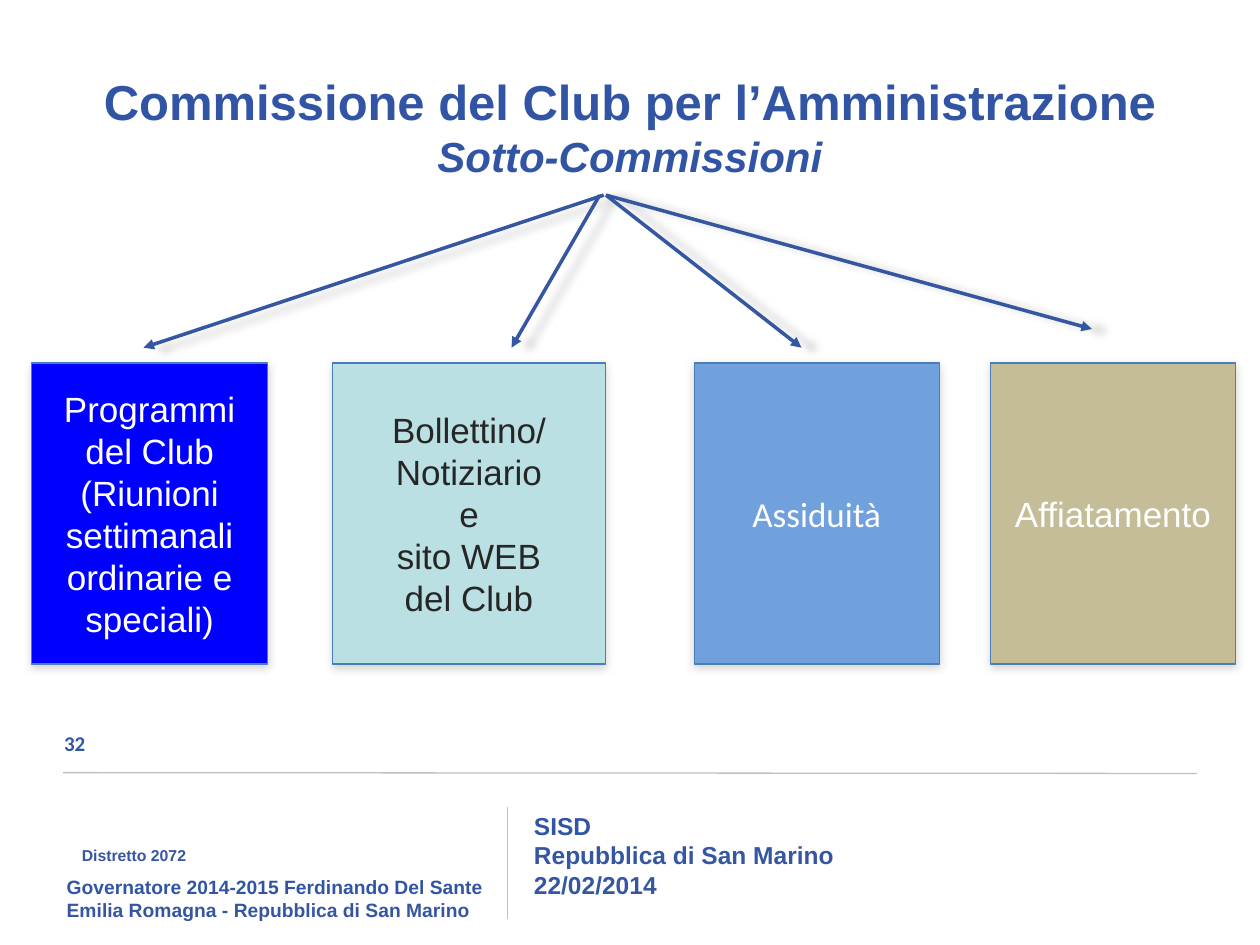
from dataclasses import dataclass

from lxml.etree import SubElement
from pptx import Presentation
from pptx.dml.color import RGBColor
from pptx.enum.shapes import MSO_CONNECTOR as Connector, MSO_SHAPE as Shape
from pptx.enum.text import MSO_ANCHOR as Anchor, MSO_AUTO_SIZE as AutoSize, PP_ALIGN as Align
from pptx.oxml.ns import qn
from pptx.util import Pt

NAVY = "3155A4"
SLATE = "3557A2"
GREY = "C0C0C0"
WHITE = "FFFFFF"
BOX_TOP, BOX_HEIGHT = 207.5, 172


@dataclass
class Committee:
    left: float
    width: float
    fill: str
    lines: list[str]
    color: str = WHITE
    font: str = "Arial"


@dataclass
class Arrow:
    start: tuple[float, float]
    end: tuple[float, float]


@dataclass
class Shadow:
    distance: float
    angle: int
    opacity: int
    blur: float = 5


COMMITTEES = [
    Committee(18, 135, "0000FF",
              ["Programmi", "del Club", "(Riunioni", "settimanali ordinarie e speciali)"]),
    Committee(190, 156, "BBE0E3",
              ["Bollettino/Notiziario", "e", "sito WEB", "del Club"], "262626"),
    Committee(396.7, 140, "71A1DC", ["Assiduità"], font="Calibri"),
    Committee(566, 140, "C4BD97", ["Affiatamento"]),
]
ARROWS = [
    Arrow((345, 111.5), (82, 198.7)),
    Arrow((342.7, 111.5), (292.3, 198.7)),
    Arrow((346.3, 111.5), (458, 198.7)),
    Arrow((346.3, 111.5), (624, 188)),
]
BOX_SHADOW = Shadow(1.8, 90, 35)
ARROW_SHADOW = Shadow(8.7, 11, 38)


def rgb(value: str) -> RGBColor:
    return RGBColor.from_string(value)


def write(frame, text: str, *, size: float, color: str = NAVY, font: str = "Arial",
          bold: bool = False, italic: bool = False, align=Align.LEFT) -> None:
    paragraph = frame.paragraphs[0]
    if paragraph.runs:
        paragraph = frame.add_paragraph()
    paragraph.alignment = align
    paragraph.space_before = Pt(0)
    run = paragraph.add_run()
    run.text = text
    run.font.name, run.font.size = font, Pt(size)
    run.font.bold, run.font.italic = bold, italic
    run.font.color.rgb = rgb(color)


def add_text_frame(slide, left: float, top: float, width: float, height: float,
                   anchor=Anchor.TOP):
    box = slide.shapes.add_textbox(Pt(left), Pt(top), Pt(width), Pt(height))
    frame = box.text_frame
    frame.word_wrap = True
    frame.vertical_anchor = anchor
    return frame


def set_effects(shape, shadow: Shadow | None = None) -> None:
    effects = SubElement(shape._element.spPr, qn("a:effectLst"))
    if shadow:
        outer = SubElement(effects, qn("a:outerShdw"), blurRad=str(Pt(shadow.blur)),
                           dist=str(Pt(shadow.distance)), dir=str(shadow.angle * 60000),
                           algn="ctr", rotWithShape="0")
        color = SubElement(outer, qn("a:srgbClr"), val="808080")
        SubElement(color, qn("a:alpha"), val=str(shadow.opacity * 1000))


def add_line(slide, start: tuple[float, float], end: tuple[float, float], color: str,
             width: float, arrowhead: bool = False, shadow: Shadow | None = None) -> None:
    points = [Pt(value) for value in (*start, *end)]
    line = slide.shapes.add_connector(Connector.STRAIGHT, *points)
    line.line.color.rgb = rgb(color)
    line.line.width = Pt(width)
    if arrowhead:
        SubElement(line.line._get_or_add_ln(), qn("a:tailEnd"), type="triangle")
    set_effects(line, shadow)


def add_committee(slide, committee: Committee) -> None:
    box = slide.shapes.add_shape(Shape.RECTANGLE, Pt(committee.left), Pt(BOX_TOP),
                                 Pt(committee.width), Pt(BOX_HEIGHT))
    box.fill.solid()
    box.fill.fore_color.rgb = rgb(committee.fill)
    box.line.color.rgb = rgb("4A7EBB")
    box.line.width = Pt(0.75)
    set_effects(box, BOX_SHADOW)
    frame = box.text_frame
    frame.word_wrap = True
    frame.vertical_anchor = Anchor.MIDDLE
    for line in committee.lines:
        write(frame, line, size=20, color=committee.color, font=committee.font,
              align=Align.CENTER)


def add_title(slide) -> None:
    title = slide.shapes.title
    title.left, title.top, title.width, title.height = Pt(0), Pt(38), Pt(720), Pt(68)
    frame = title.text_frame
    frame.auto_size = AutoSize.NONE
    frame.vertical_anchor = Anchor.MIDDLE
    write(frame, "Commissione del Club per l’Amministrazione", size=28, bold=True,
          align=Align.CENTER)
    write(frame, "Sotto-Commissioni", size=24, bold=True, italic=True, align=Align.CENTER)


def add_footer(slide) -> None:
    number = add_text_frame(slide, 29.5, 410.4, 168, 29, Anchor.MIDDLE)
    write(number, "32", size=12, font="Calibri", bold=True)

    event = add_text_frame(slide, 298, 456.5, 301, 64, Anchor.MIDDLE)
    write(event, "SISD", size=14, bold=True)
    for text in ("Repubblica di San Marino", "22/02/2014"):
        write(event, text, size=14, color=SLATE, bold=True)

    add_line(slide, (290.2, 525), (290.2, 461), GREY, 0.75)
    add_line(slide, (36, 441.5), (684, 442), GREY, 0.75)

    governor = add_text_frame(slide, 31, 496.8, 284, 43)
    write(governor, "Governatore 2014-2015 Ferdinando Del Sante", size=11, bold=True)
    write(governor, "Emilia Romagna - Repubblica di San Marino", size=11, color=SLATE,
          bold=True)

    district = add_text_frame(slide, 19.4, 479.5, 136, 34)
    district.margin_left = Pt(27.4)
    write(district, "Distretto 2072", size=9, color=SLATE, bold=True)


def main() -> None:
    presentation = Presentation()
    presentation.slide_width, presentation.slide_height = Pt(720), Pt(540)
    slide = presentation.slides.add_slide(presentation.slide_layouts[5])
    add_footer(slide)
    add_title(slide)
    for committee in COMMITTEES:
        add_committee(slide, committee)
    for arrow in ARROWS:
        add_line(slide, arrow.start, arrow.end, SLATE, 2, True, ARROW_SHADOW)
    presentation.save("out.pptx")


if __name__ == "__main__":
    main()
